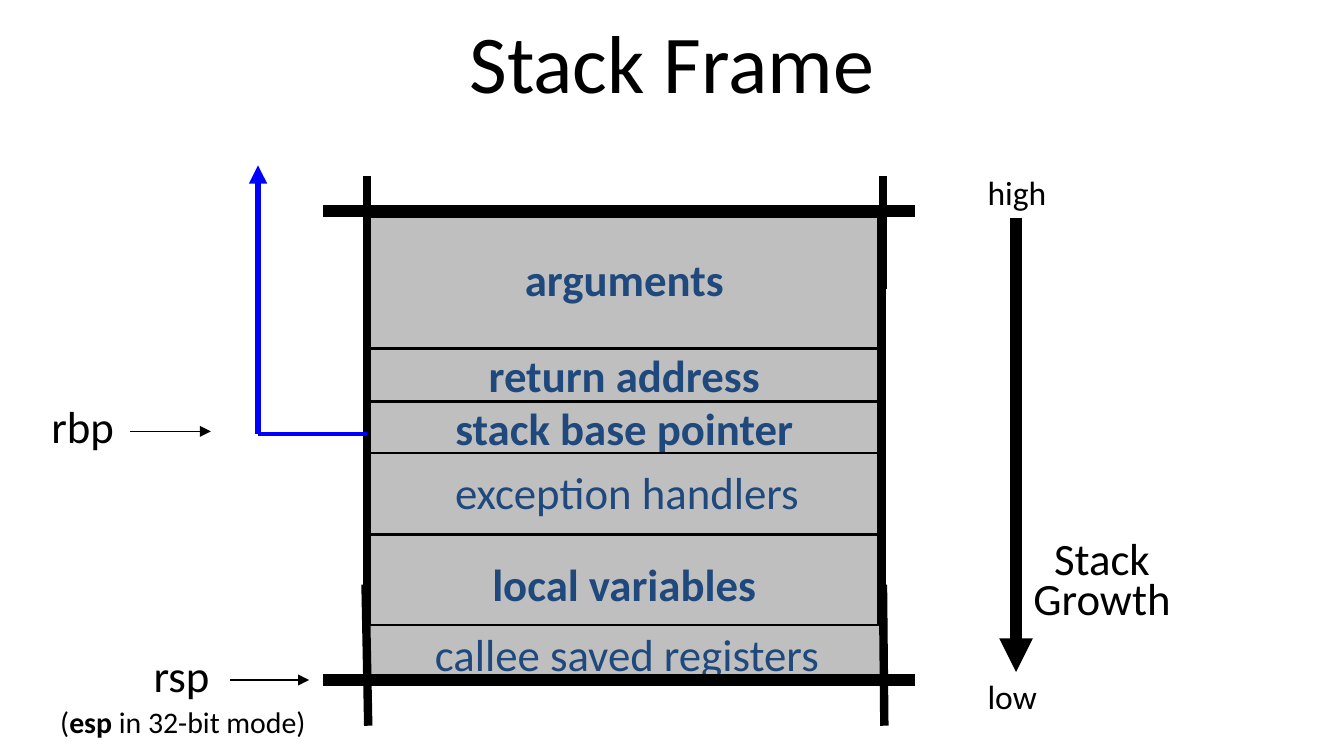
from pptx import Presentation
from pptx import util as u
from pptx.dml.color import RGBColor
from pptx.enum import shapes, text
from pptx.oxml.ns import qn
from lxml import etree

THEME = {
    "font": "Calibri", "ink": "000000", "label": "1F497D",
    "row": "BFBFBF", "link": "0000FF",
    "title": 44, "body": 24, "small": 18, "note": 16,
    "thin": 0.75, "side": 4.5, "thick": 6,
}
SLIDE_W = 10
SLIDE_H = SLIDE_W * 9 / 16
ROW_W = 3.83
CENTER, LEFT = text.PP_ALIGN.CENTER, text.PP_ALIGN.LEFT

# Frame rows, back to front: label, left, top, height, bold
ROWS = [
    ("exception handlers", 2.75, 3.35, 0.62, False),
    ("arguments", 2.73, 1.55, 1.04, True),
    ("return address", 2.73, 2.6, 0.38, True),
    ("stack base pointer", 2.73, 2.99, 0.38, True),
    ("local variables", 2.73, 3.98, 0.73, True),
]
SAVED_ROW = ("callee saved registers", 2.75, 4.65, 0.42, False)

# Lines: x1, y1, x2, y2, width, colour, arrow
BACK_LINES = [
    (1.71, 5.06, 2.3, 5.06, "thin", "ink", True),
    (0.97, 3.21, 1.57, 3.21, "thin", "ink", True),
    (7.56, 1.62, 7.56, 5, "thick", "ink", True),
    (2.73, 1.62, 6.56, 1.62, "thin", "ink", False),
]
FRAME_LINES = [
    (2.4, 1.57, 6.81, 1.57, "thick", "ink", False),
    (2.73, 3.23, 1.92, 3.23, 2.25, "link", False),
    (1.92, 3.23, 1.92, 1.23, 3.25, "link", True),
    (2.73, 1.31, 2.73, 2.15, "side", "ink", False),
    (6.57, 1.31, 6.57, 2.15, "side", "ink", False),
]
FRONT_LINES = [
    (2.4, 5.06, 6.81, 5.06, "thick", "ink", False),
    (6.57, 4.35, 6.58, 5.4, "side", "ink", False),
    (2.72, 4.35, 2.74, 5.4, "side", "ink", False),
]

# Text boxes: paragraphs of (text, bold) runs, box, size, alignment
LABELS = [
    ([[("rsp", False)]], (1.04, 4.77, 0.62, 0.5), "body", CENTER),
    ([[("rbp", False)]], (0.28, 2.92, 0.67, 0.5), "body", CENTER),
    ([[("Stack", False)], [("Growth", False)]], (7.58, 3.9, 1.24, 0.84), "body", CENTER),
    ([[("high", False)]], (7.25, 1.23, 0.64, 0.4), "small", LEFT),
    ([[("low", False)]], (7.25, 4.98, 0.57, 0.4), "small", LEFT),
    ([[("(", False), ("esp", True), (" in 32-bit mode)", False)]],
     (0.35, 5.19, 2.04, 0.37), "note", LEFT),
]


def rgb(name):
    return RGBColor.from_string(THEME[name])


def style(p, size, color="ink", align=CENTER):
    p.alignment = align
    p.font.name, p.font.size = THEME["font"], u.Pt(THEME[size])
    p.font.color.rgb = rgb(color)


def add_rect(s, left, top, height, line_width, fill=None):
    sp = s.shapes.add_shape(shapes.MSO_SHAPE.RECTANGLE,
                            *map(u.Inches, (left, top, ROW_W, height)))
    sp.shadow.inherit = False
    if fill:
        sp.fill.solid()
        sp.fill.fore_color.rgb = rgb(fill)
    else:
        sp.fill.background()
    sp.line.color.rgb = rgb("ink")
    sp.line.width = u.Pt(THEME[line_width])
    return sp


def add_row(s, label, left, top, height, bold):
    tf = add_rect(s, left, top, height, "thin", "row").text_frame
    tf.word_wrap = False
    tf.vertical_anchor = text.MSO_ANCHOR.MIDDLE
    p = tf.paragraphs[0]
    p.text = label
    style(p, "body", "label")
    p.font.bold = bold


def add_line(s, x1, y1, x2, y2, width, color, arrow):
    cx = s.shapes.add_connector(shapes.MSO_CONNECTOR.STRAIGHT,
                                *map(u.Inches, (x1, y1, x2, y2)))
    cx.line.color.rgb = rgb(color)
    cx.line.width = u.Pt(THEME.get(width, width))
    if arrow:
        etree.SubElement(cx.get_or_add_ln(), qn("a:tailEnd"), type="triangle")
    etree.SubElement(cx._element.spPr, qn("a:effectLst"))


def add_label(s, paragraphs, box, size, align):
    tf = s.shapes.add_textbox(*map(u.Inches, box)).text_frame
    tf.word_wrap = False
    for i, runs in enumerate(paragraphs):
        p = tf.add_paragraph() if i else tf.paragraphs[0]
        style(p, size, align=align)
        if i:
            p.line_spacing = 0.73
        for words, bold in runs:
            r = p.add_run()
            r.text, r.font.bold = words, bold
    return tf


prs = Presentation()
prs.slide_width, prs.slide_height = u.Inches(SLIDE_W), u.Inches(SLIDE_H)
s = prs.slides.add_slide(prs.slide_layouts[6])

# Title
tf = add_label(s, [[("Stack Frame", False)]], (0.5, -0.02, 9, 0.94), "title", CENTER)
tf.word_wrap = True
tf.vertical_anchor = text.MSO_ANCHOR.MIDDLE

# Stack rows and their outline
for row in ROWS:
    add_row(s, *row)
for line in BACK_LINES:
    add_line(s, *line)
add_rect(s, 2.73, 1.58, 3.15, "side")
for line in FRAME_LINES:
    add_line(s, *line)

# Bottom row and the lines over it
add_row(s, *SAVED_ROW)
for line in FRONT_LINES:
    add_line(s, *line)

# Register, address and growth labels
for label in LABELS:
    add_label(s, *label)

prs.save("out.pptx")
